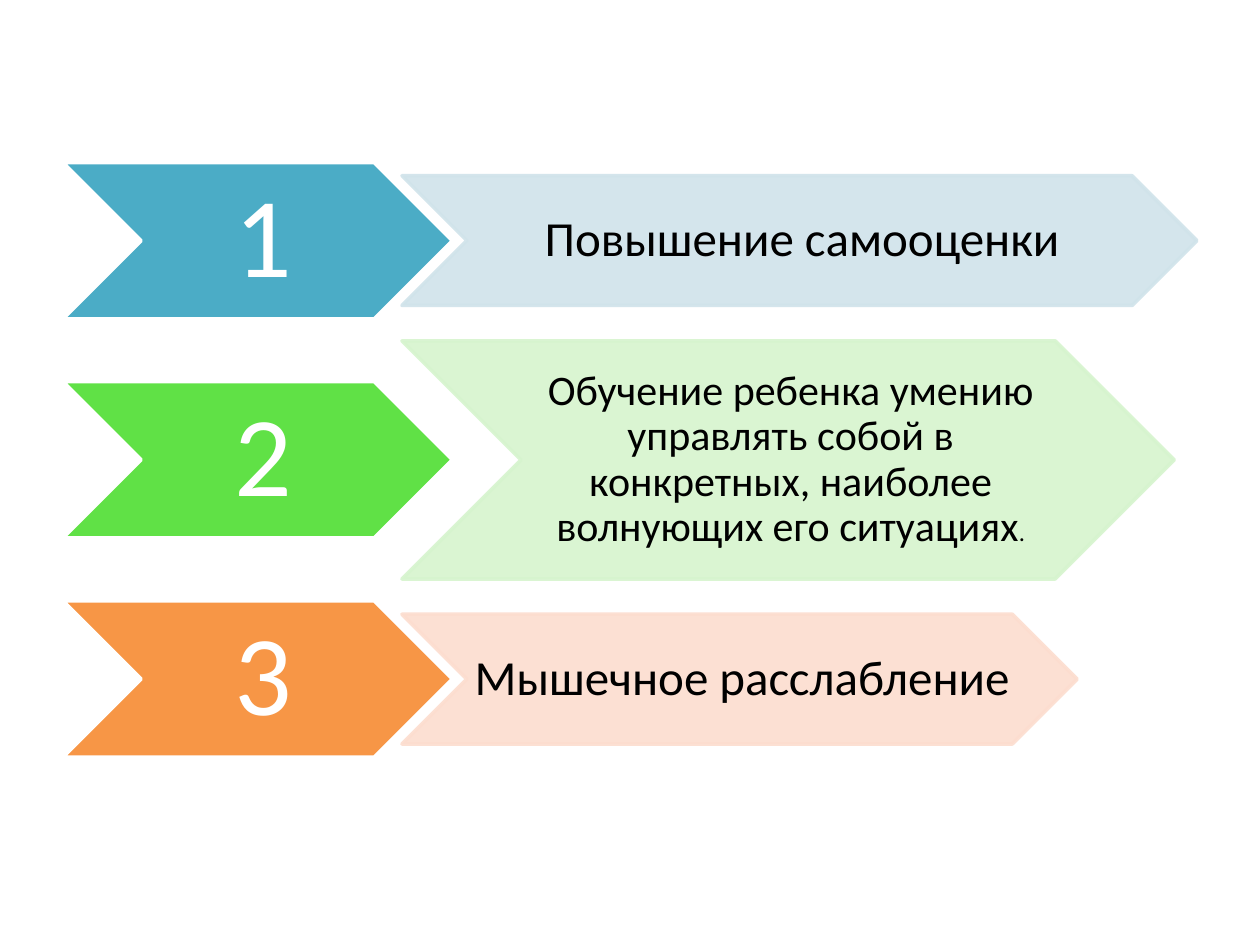
from dataclasses import dataclass

from lxml import etree
from pptx import Presentation
from pptx.dml.color import RGBColor
from pptx.enum.shapes import MSO_SHAPE
from pptx.enum.text import MSO_ANCHOR, PP_ALIGN
from pptx.oxml.ns import qn
from pptx.util import Inches, Pt

CHEVRON = MSO_SHAPE.CHEVRON
CENTER = PP_ALIGN.CENTER
MIDDLE = MSO_ANCHOR.MIDDLE


@dataclass(frozen=True)
class Theme:
    font: str = "Calibri"
    white: str = "FFFFFF"
    black: str = "000000"
    number_size: int = 65
    goal_size: int = 28
    long_goal_size: int = 24
    stop_size: int = 14
    outline: int = 2
    goal_opacity: int = 90


THEME = Theme()

NUMBER_LEFT, NUMBER_WIDTH, NUMBER_HEIGHT = 0.5, 3.09, 1.24
GOAL_LEFT = 3.19
FIRST_MIDDLE, ROW_STEP = 1.91, 1.74
NUMBER_INSETS = (0.09, 0.05)
GOAL_INSETS = (0.04, 0.02)

GOALS = [
    ("4BACC6", "D0E3EA", 6.31, 1.03,
     [("Повышение самооценки", THEME.goal_size)]),
    ("60E146", "D6F4CE", 6.13, 1.89,
     [("Обучение ребенка умению управлять собой в конкретных, "
       "наиболее волнующих его ситуациях", THEME.long_goal_size),
      (".", THEME.stop_size)]),
    ("F79646", "FCDDCF", 5.36, 1.03,
     [("Мышечное расслабление", THEME.goal_size)]),
]


def set_opacity(shape, percent):
    for color in shape._element.spPr.iter(qn("a:srgbClr")):
        etree.SubElement(color, qn("a:alpha")).set("val", str(percent * 1000))


def add_chevron(page, left, middle, width, height, fill, line):
    shape = page.shapes.add_shape(
        CHEVRON, Inches(left), Inches(middle - height / 2),
        Inches(width), Inches(height))
    shape.shadow.inherit = False
    shape.fill.solid()
    shape.fill.fore_color.rgb = RGBColor.from_string(fill)
    shape.line.color.rgb = RGBColor.from_string(line)
    shape.line.width = Pt(THEME.outline)
    return shape


def add_label(page, left, middle, width, height, spans, color, insets):
    box = page.shapes.add_textbox(
        Inches(left + height / 2), Inches(middle - height / 2),
        Inches(width - height), Inches(height))
    side, edge = insets
    frame_format = {
        "word_wrap": True,
        "vertical_anchor": MIDDLE,
        "margin_left": Inches(side),
        "margin_right": 0,
        "margin_top": Inches(edge),
        "margin_bottom": Inches(edge),
    }
    for name, value in frame_format.items():
        setattr(box.text_frame, name, value)
    para = box.text_frame.paragraphs[0]
    para.alignment = CENTER
    para.line_spacing = 0.9
    for text, size in spans:
        span = para.add_run()
        span.text = text
        span.font.name = THEME.font
        span.font.size = Pt(size)
        span.font.color.rgb = RGBColor.from_string(color)


def add_goal_row(page, index, goal):
    strong, pale, width, height, spans = goal
    middle = FIRST_MIDDLE + index * ROW_STEP
    number_place = (NUMBER_LEFT, middle, NUMBER_WIDTH, NUMBER_HEIGHT)
    goal_place = (GOAL_LEFT, middle, width, height)
    number_spans = [(str(index + 1), THEME.number_size)]

    add_chevron(page, *number_place, strong, THEME.white)
    add_label(page, *number_place, number_spans, THEME.white, NUMBER_INSETS)
    goal_shape = add_chevron(page, *goal_place, pale, pale)
    set_opacity(goal_shape, THEME.goal_opacity)
    add_label(page, *goal_place, spans, THEME.black, GOAL_INSETS)


def main():
    deck = Presentation()
    deck.slide_width = Inches(10)
    deck.slide_height = Inches(7.5)
    page = deck.slides.add_slide(deck.slide_layouts[6])
    for index, goal in enumerate(GOALS):
        add_goal_row(page, index, goal)
    deck.save("out.pptx")


if __name__ == "__main__":
    main()
